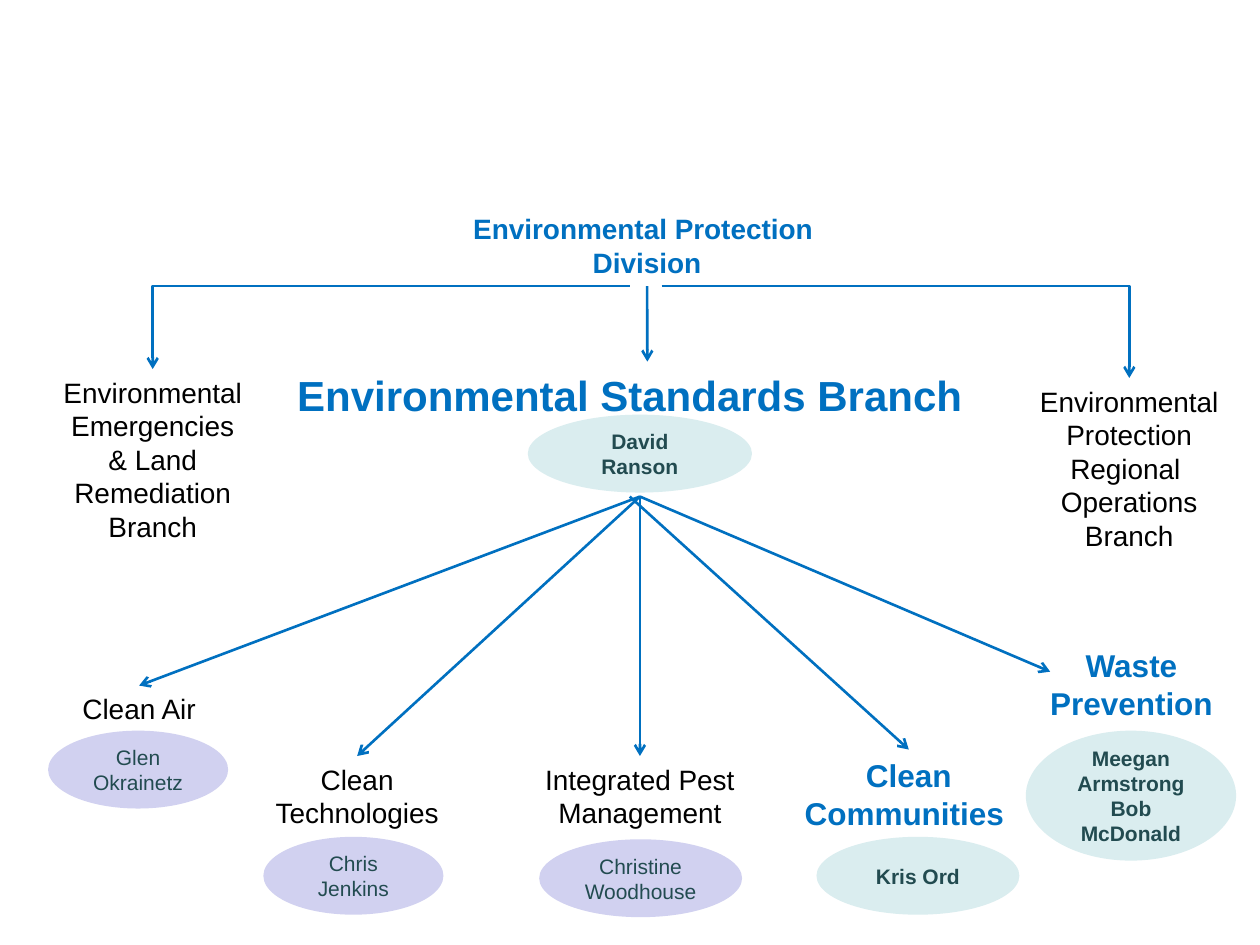
from lxml.etree import SubElement
from pptx import Presentation
from pptx.dml.color import RGBColor
from pptx.enum.shapes import MSO_CONNECTOR, MSO_SHAPE
from pptx.enum.text import MSO_ANCHOR, PP_ALIGN
from pptx.oxml.ns import qn
from pptx.util import Cm, Pt

COLORS = {
    "blue": "0070C0",
    "black": "000000",
    "teal": "224B50",
    "mint": "DAEDEF",
    "lavender": "D1D1F0",
}
TOP, BOTTOM = 0, 2


class ChartSlide:
    font_name = "Arial"
    line_width = Pt(1.5)

    def __init__(self, presentation):
        self.slide = presentation.slides.add_slide(presentation.slide_layouts[0])
        subtitle = self.slide.placeholders[1].element
        subtitle.getparent().remove(subtitle)

    def color(self, name):
        return RGBColor.from_string(COLORS[name])

    def label(self, shape, text, size, color, bold, anchor):
        text_frame = shape.text_frame
        text_frame.word_wrap = True
        text_frame.vertical_anchor = anchor
        text_frame.text = text
        for paragraph in text_frame.paragraphs:
            paragraph.alignment = PP_ALIGN.CENTER
            for run in paragraph.runs:
                run.font.name = self.font_name
                run.font.size = Pt(size)
                run.font.bold = bold
                run.font.color.rgb = self.color(color)

    def title(self, text, left, top, width, height):
        shape = self.slide.shapes.title
        shape.left, shape.top = Cm(left), Cm(top)
        shape.width, shape.height = Cm(width), Cm(height)
        self.label(shape, text, 24, "blue", True, MSO_ANCHOR.MIDDLE)
        return shape

    def unit(self, text, left, top, width, height, size=16, highlight=False):
        shape = self.slide.shapes.add_textbox(Cm(left), Cm(top), Cm(width), Cm(height))
        color = "blue" if highlight else "black"
        self.label(shape, text, size, color, highlight, MSO_ANCHOR.TOP)
        return shape

    def person(self, text, left, top, width, height=1.57, highlight=False):
        shape = self.slide.shapes.add_shape(
            MSO_SHAPE.OVAL, Cm(left), Cm(top), Cm(width), Cm(height))
        shape.shadow.inherit = False
        shape.fill.solid()
        shape.fill.fore_color.rgb = self.color("mint" if highlight else "lavender")
        shape.line.fill.background()
        self.label(shape, text, 12, "teal", highlight, MSO_ANCHOR.MIDDLE)

    def arrow(self, start, end, source=None, target=None, bent=False):
        kind = MSO_CONNECTOR.ELBOW if bent else MSO_CONNECTOR.STRAIGHT
        connector = self.slide.shapes.add_connector(
            kind, Cm(start[0]), Cm(start[1]), Cm(end[0]), Cm(end[1]))
        if source is not None:
            connector.begin_connect(source, BOTTOM)
        if target is not None:
            connector.end_connect(target, TOP)
        connector.line.color.rgb = self.color("blue")
        connector.line.width = self.line_width
        properties = connector.element.spPr
        if bent:
            properties.find(qn("a:prstGeom")).set("prst", "bentConnector2")
        SubElement(properties.find(qn("a:ln")), qn("a:tailEnd"), type="arrow")
        SubElement(properties, qn("a:effectLst"))


def main():
    presentation = Presentation()
    presentation.slide_width, presentation.slide_height = Cm(25.4), Cm(19.05)
    chart = ChartSlide(presentation)

    chart.person("Kris Ord", 16.46, 16.87, 4.09, highlight=True)
    chart.person("David Ranson", 10.64, 8.36, 4.52, highlight=True)
    chart.person("Glen Okrainetz", 0.97, 14.73, 3.63)
    chart.person("Chris Jenkins", 5.31, 16.87, 3.63)
    chart.person("Christine\nWoodhouse", 10.87, 16.92, 4.09)
    chart.person("Meegan Armstrong Bob McDonald", 20.68, 14.73, 4.24, 2.62, highlight=True)

    branch = chart.title("Environmental Standards Branch", 1.9, 5.92, 21.59, 4.09)
    division = chart.unit("Environmental Protection \nDivision",
                          8.89, 4.14, 8.31, 1.63, highlight=True)
    emergencies = chart.unit("Environmental\nEmergencies\n& Land Remediation Branch",
                             0.58, 7.44, 5, 3.68)
    regional = chart.unit("Environmental Protection\nRegional \nOperations Branch",
                          20.62, 7.62, 4.29, 3.68)
    air = chart.unit("Clean Air", 0.58, 13.82, 4.45, 0.94)
    technologies = chart.unit("Clean Technologies", 5.08, 15.24, 4.24, 1.63)
    pests = chart.unit("Integrated Pest Management", 10.36, 15.24, 5.08, 1.63)
    communities = chart.unit("Clean Communities ", 15.88, 15.11, 4.88, 1.8, 18, True)
    chart.unit("Waste Prevention", 20.37, 12.9, 4.88, 1.7, 18, True)

    hub = (12.9, 10.01)
    for target, end in [
        (air, (2.81, 13.82)),
        (technologies, (7.2, 15.24)),
        (pests, (12.9, 15.24)),
        (None, (21.17, 13.54)),
    ]:
        chart.arrow(hub, end, target=target)
    chart.arrow((12.7, 10.01), (18.32, 15.11), branch, communities)

    chart.arrow((13.05, 5.77), (13.05, 7.29), division)
    chart.arrow((12.7, 5.77), (3.08, 7.44), target=emergencies, bent=True)
    chart.arrow((13.34, 5.77), (22.77, 7.62), target=regional, bent=True)

    presentation.save("out.pptx")


if __name__ == "__main__":
    main()
